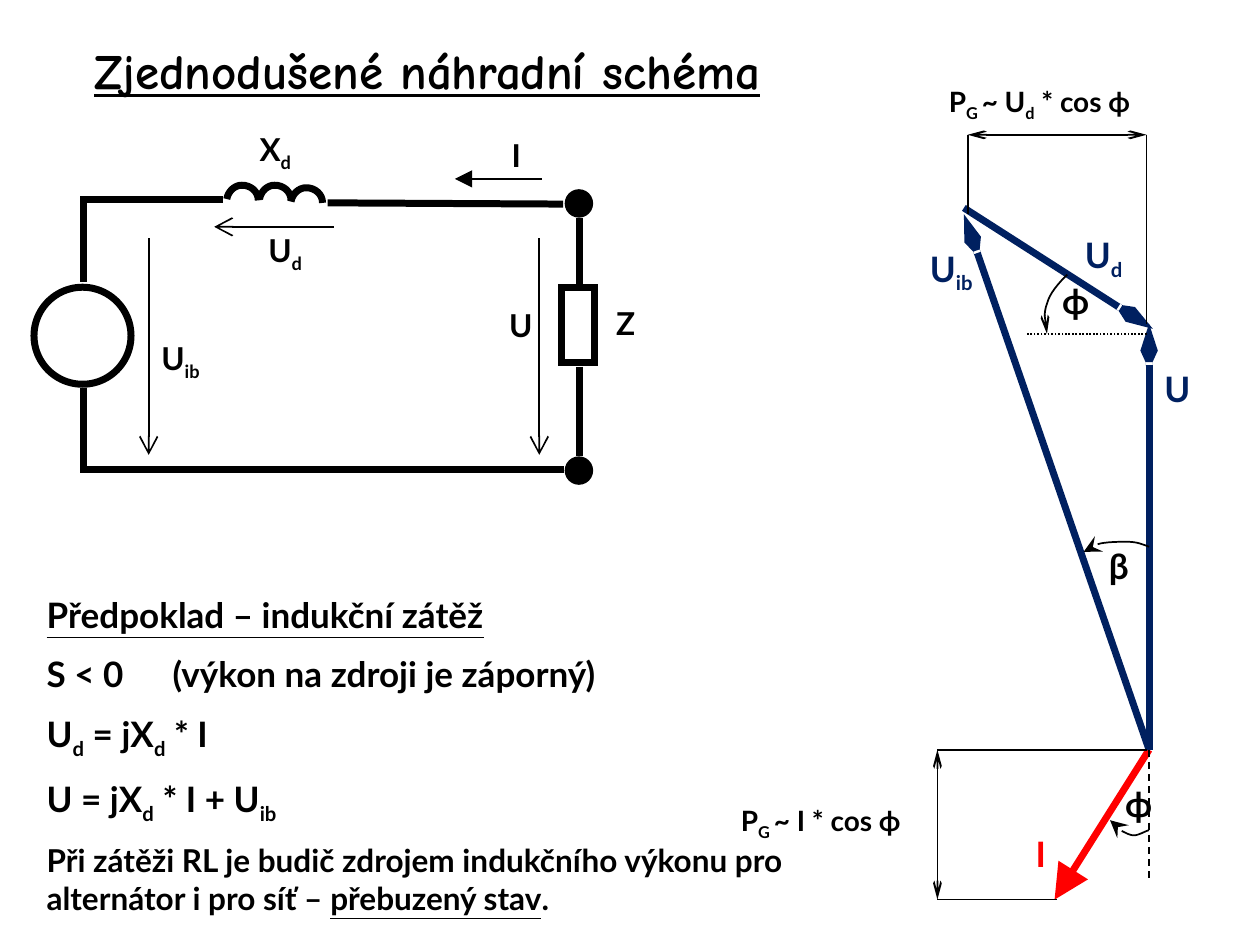
"""Builds a slide with a simplified equivalent circuit and its phasor diagram."""
from dataclasses import dataclass

from lxml import etree
from pptx import Presentation
from pptx.dml.color import RGBColor
from pptx.enum.dml import MSO_LINE
from pptx.enum.shapes import MSO_CONNECTOR as Wire, MSO_SHAPE as Shape
from pptx.enum.text import MSO_ANCHOR as Anchor, MSO_AUTO_SIZE, PP_ALIGN
from pptx.oxml.ns import qn
from pptx.util import Inches, Pt


@dataclass(frozen=True)
class Theme:
    black: RGBColor = RGBColor(0, 0, 0)
    navy: RGBColor = RGBColor(0x00, 0x20, 0x60)
    red: RGBColor = RGBColor(0xFF, 0, 0)
    title_font: str = "Comic Neue"
    text_font: str = "Lato"
    title: int = 28
    large: int = 20
    medium: int = 18
    small: int = 16
    thin: int = 1
    thick: int = 4


theme = Theme()
SUB, UNDER = "sub", "under"


def write(para, spans, size, color=theme.black, font=theme.text_font):
    for text, mark in spans:
        span = para.add_run()
        span.text = text
        span.font.name = font
        span.font.size = Pt(size)
        span.font.bold = True
        span.font.underline = mark == UNDER
        span.font.color.rgb = color
        if mark == SUB:
            span.font._element.set("baseline", "-25000")


def stroke(shape, weight, color=theme.black, head=None, tail=None, dash=None, spread="lg"):
    shape.line.color.rgb = color
    shape.line.width = Pt(weight)
    if dash:
        shape.line.dash_style = dash
    outline = shape.line._get_or_add_ln()
    etree.SubElement(outline, qn("a:miter"), lim="800000")
    for tag, kind in (("a:headEnd", head), ("a:tailEnd", tail)):
        if kind:
            etree.SubElement(outline, qn(tag), type=kind, w=spread, len="lg")
    properties = shape.element.spPr
    if properties.find(qn("a:effectLst")) is None:
        etree.SubElement(properties, qn("a:effectLst"))


deck = Presentation()
deck.slide_width, deck.slide_height = Inches(10), Inches(7.5)
page = deck.slides.add_slide(deck.slide_layouts[1])
shapes = page.shapes

title, body = page.placeholders
for box, (left, top, width, height), anchor in (
    (title, (0.12, 0.21, 6.54, 0.69), Anchor.MIDDLE),
    (body, (0.27, 4.66, 6.31, 2.71), Anchor.TOP),
):
    box.left, box.top = Inches(left), Inches(top)
    box.width, box.height = Inches(width), Inches(height)
    box.text_frame.auto_size = MSO_AUTO_SIZE.NONE
    box.text_frame.vertical_anchor = anchor

heading = title.text_frame.paragraphs[0]
heading.alignment = PP_ALIGN.CENTER
write(heading, [("Zjednodušené náhradní schéma", UNDER)], theme.title, font=theme.title_font)

statements = [
    (theme.large, [("Předpoklad – indukční zátěž", UNDER)]),
    (theme.large, [("S < 0 \t(výkon na zdroji je záporný)", "")]),
    (theme.large, [("U", ""), ("d", SUB), (" = jX", ""), ("d", SUB), (" * I", "")]),
    (theme.large, [("U = jX", ""), ("d", SUB), (" * I + U", ""), ("ib", SUB)]),
    (theme.medium, [
        ("Při zátěži RL je budič zdrojem indukčního výkonu pro alternátor i pro síť – ", ""),
        ("přebuzený stav", UNDER), (".", ""),
    ]),
]
for row, (size, spans) in enumerate(statements):
    para = body.text_frame.paragraphs[0] if row == 0 else body.text_frame.add_paragraph()
    para.space_before = Pt(size / 2 if row else 0)
    layout = para._p.get_or_add_pPr()
    layout.set("marL", "0")
    layout.set("indent", "0")
    etree.SubElement(layout, qn("a:buNone"))
    tabs = etree.SubElement(layout, qn("a:tabLst"))
    etree.SubElement(tabs, qn("a:tab"), pos=str(Inches(1.74)), algn="l")
    write(para, spans, size)

parts = [
    (Shape.OVAL, 0.27, 2.28, 0.77, 0.77, False),
    (Shape.RECTANGLE, 4.46, 2.28, 0.26, 0.6, False),
    (Shape.OVAL, 4.51, 3.65, 0.17, 0.17, True),
    (Shape.OVAL, 4.51, 1.53, 0.17, 0.17, True),
]
for kind, left, top, width, height, filled in parts:
    part = shapes.add_shape(kind, Inches(left), Inches(top), Inches(width), Inches(height))
    part.shadow.inherit = False
    if filled:
        part.fill.solid()
        part.fill.fore_color.rgb = theme.black
    else:
        part.fill.background()
    stroke(part, theme.thick)

source, tip = (9.12, 5.95), (9.12, 2.57)
thin, thick = {"weight": theme.thin}, {"weight": theme.thick}
arrow = thin | {"tail": "arrow"}
slim_arrow = arrow | {"spread": "sm"}
measure = slim_arrow | {"head": "arrow"}
phasor = thick | {"color": theme.navy, "tail": "arrow", "spread": "sm"}
straight_lines = [
    ((1.18, 1.89), (1.18, 3.61), arrow),
    ((4.28, 1.89), (4.28, 3.61), arrow),
    ((2.65, 1.8), (1.7, 1.8), arrow),
    ((4.3, 1.42), (3.61, 1.42), thin | {"tail": "triangle"}),
    ((4.6, 1.73), (4.6, 2.25), thick),
    ((4.6, 2.91), (4.6, 3.62), thick),
    ((2.6, 1.61), (4.47, 1.62), thick),
    (source, tip, phasor),
    (source, (8.37, 7.14), thick | {"color": theme.red, "tail": "triangle"}),
    ((7.65, 1.65), (9.15, 2.61), phasor),
    (source, (7.65, 1.7), phasor),
    (source, (9.12, 6.98), thin | {"dash": MSO_LINE.DASH}),
    ((9.1, 2.57), (9.1, 1.07), thin),
    ((7.68, 1.7), (7.68, 1.07), thin),
    ((7.68, 1.07), (9.1, 1.07), measure),
    ((9.1, 2.65), (8.15, 2.65), thin | {"dash": MSO_LINE.ROUND_DOT}),
    ((9.1, 5.95), (7.44, 5.95), thin),
    ((8.39, 7.14), (7.44, 7.14), thin),
    ((7.44, 5.95), (7.44, 7.14), measure),
]
corner_wires = [
    ((1.77, 1.58), (0.66, 2.24), thick),
    ((4.48, 3.73), (0.66, 3.08), thick),
]
for kind, lines in ((Wire.STRAIGHT, straight_lines), (Wire.ELBOW, corner_wires)):
    for start, end, style in lines:
        line = shapes.add_connector(kind, *map(Inches, start + end))
        if kind == Wire.ELBOW:
            line.element.spPr.find(qn("a:prstGeom")).set("prst", "bentConnector2")
        stroke(line, **style)

coil = [(2.05, 1.59), (2.05, 1.52), (1.99, 1.47), (1.92, 1.47), (1.86, 1.47), (1.81, 1.52), (1.8, 1.58)]
curves = [
    ([(x + dx, y + dy) for x, y in coil], thick)
    for dx, dy in ((0, 0), (0.26, 0), (0.51, 0.02))
]
stealth = thin | {"tail": "stealth"}
curves += [
    ([(9.12, 4.34), (9.07, 4.32), (9.02, 4.3), (8.95, 4.3), (8.88, 4.3),
      (8.77, 4.3), (8.71, 4.32), (8.65, 4.33), (8.62, 4.37), (8.6, 4.38)], stealth),
    ([(9.12, 6.59), (9.1, 6.59), (9.04, 6.63), (9, 6.63), (8.96, 6.63),
      (8.92, 6.6), (8.89, 6.59), (8.86, 6.57), (8.82, 6.54), (8.81, 6.51)], stealth),
    ([(8.47, 2.18), (8.4, 2.25), (8.33, 2.33), (8.31, 2.41), (8.28, 2.49), (8.29, 2.57), (8.31, 2.65)], slim_arrow),
]
STEPS = 8
for knots, style in curves:
    points = []
    for first in range(0, len(knots) - 1, 3):
        for t in (step / STEPS for step in range(1, STEPS + 1)):
            weights = ((1 - t) ** 3, 3 * t * (1 - t) ** 2, 3 * t * t * (1 - t), t ** 3)
            bend = knots[first:first + 4]
            points.append(tuple(Inches(sum(w * knot[axis] for w, knot in zip(weights, bend))) for axis in (0, 1)))
    builder = shapes.build_freeform(*map(Inches, knots[0]))
    builder.add_line_segments(points, close=False)
    curve = builder.convert_to_shape()
    curve.shadow.inherit = False
    curve.fill.background()
    stroke(curve, **style)

circuit = (theme.medium, theme.black, Anchor.TOP, False)
vector = (theme.large, theme.navy, Anchor.MIDDLE, False)
wrapped_vector = (theme.large, theme.navy, Anchor.MIDDLE, True)
current = (theme.large, theme.red, Anchor.MIDDLE, False)
angle = (theme.large, theme.black, Anchor.MIDDLE, False)
power = (theme.small, theme.black, Anchor.MIDDLE, False)
labels = [
    (1.24, 2.65, 0.42, 0.38, circuit, [("U", ""), ("ib", SUB)]),
    (2.09, 1.79, 0.37, 0.38, circuit, [("U", ""), ("d", SUB)]),
    (4, 2.39, 0.26, 0.38, circuit, [("U", "")]),
    (2.02, 0.99, 0.36, 0.38, circuit, [("X", ""), ("d", SUB)]),
    (4.85, 2.37, 0.24, 0.38, circuit, [("Z", "")]),
    (4.02, 1.04, 0.2, 0.38, circuit, [("I", "")]),
    (8.18, 6.57, 0.21, 0.41, current, [("I", "")]),
    (9.2, 2.88, 0.28, 0.41, vector, [("U", "")]),
    (8.57, 1.84, 0.5, 0.41, wrapped_vector, [("U", ""), ("d", SUB)]),
    (7.34, 1.94, 0.46, 0.42, vector, [("U", ""), ("ib", SUB)]),
    (8.76, 4.28, 0.23, 0.41, angle, [("β", "")]),
    (8.89, 6.17, 0.25, 0.41, angle, [("ϕ", "")]),
    (8.39, 2.18, 0.25, 0.41, angle, [("ϕ", "")]),
    (7.49, 0.65, 1.76, 0.35, power, [("P", ""), ("G ", SUB), ("~ U", ""), ("d", SUB), (" * cos ϕ", "")]),
    (5.84, 6.35, 1.61, 0.35, power, [("P", ""), ("G ", SUB), ("~ I * cos ϕ", "")]),
]
for *place, (size, color, anchor, wrap), spans in labels:
    frame = shapes.add_textbox(*map(Inches, place)).text_frame
    frame.word_wrap = wrap
    frame.auto_size = MSO_AUTO_SIZE.SHAPE_TO_FIT_TEXT
    frame.vertical_anchor = anchor
    frame.margin_left = frame.margin_right = frame.margin_top = frame.margin_bottom = Inches(0.04)
    write(frame.paragraphs[0], spans, size, color)

deck.save("out.pptx")
